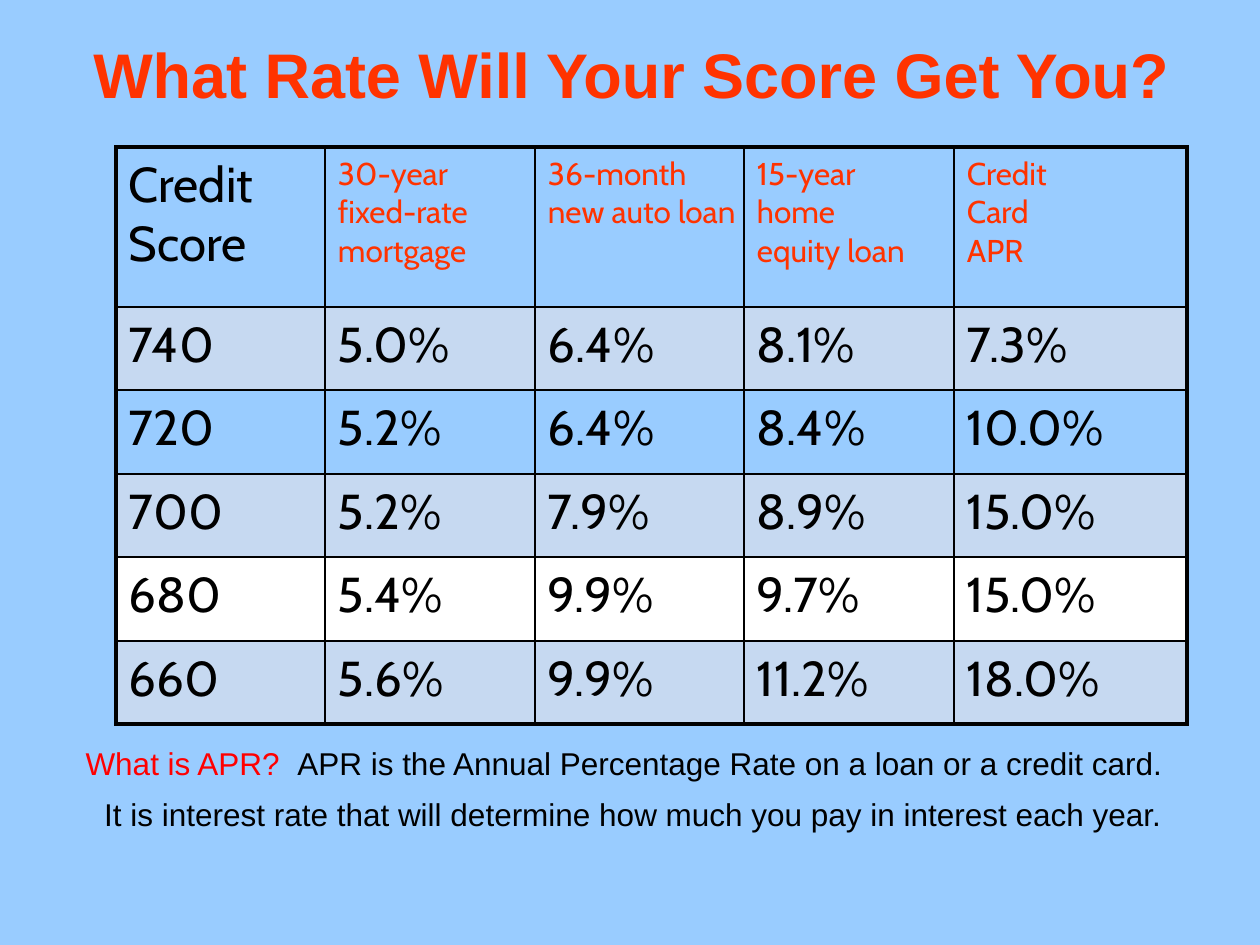
from lxml.etree import SubElement
from pptx import Presentation
from pptx.dml.color import RGBColor as Rgb
from pptx.enum.text import MSO_ANCHOR as Anchor, PP_ALIGN as Align
from pptx.oxml.ns import qn
from pptx.util import Pt

PX = 914400 / 126
COLORS = {"sky": "99CCFF", "orange": "FF3300", "red": "FF0000",
          "black": "000000", "pale": "C6D9F1", "white": "FFFFFF"}


def px(*lengths):
    """Turn pixel lengths into a list of EMU."""
    return [round(length * PX) for length in lengths]


def add_span(para, text, font, size, color, bold=False):
    span = para.add_run()
    span.text = text
    for name, value in {"name": font, "size": Pt(size), "bold": bold}.items():
        setattr(span.font, name, value)
    span.font.color.rgb = Rgb.from_string(COLORS[color])


deck = Presentation()
deck.slide_width, deck.slide_height = px(1260, 945)
slide = deck.slides.add_slide(deck.slide_layouts[6])
slide.background.fill.solid()
slide.background.fill.fore_color.rgb = Rgb.from_string(COLORS["sky"])
SIDES = ("margin_left", "margin_top", "margin_right", "margin_bottom")

# Title
title = slide.shapes.add_textbox(*px(67, 26, 1134, 95)).text_frame
title_format = {"word_wrap": True, "vertical_anchor": Anchor.MIDDLE,
                **dict(zip(SIDES, px(13, 6, 18, 6)))}
for name, value in title_format.items():
    setattr(title, name, value)
title.paragraphs[0].alignment = Align.CENTER
add_span(title.paragraphs[0], "What Rate Will Your Score Get You?", "Arial", 36, "orange", True)

# Rate table: row fill, then cell texts with one paragraph a line
ROWS = [
    (None, ["Credit\nScore", "30-year\nfixed-rate mortgage", "36-month\nnew auto loan",
            "15-year\nhome\nequity loan", "Credit\nCard\nAPR"]),
    ("pale", ["740", "5.0%", "6.4%", "8.1%", "7.3%"]),
    (None, ["720", "5.2%", "6.4%", "8.4%", "10.0%"]),
    ("pale", ["700", "5.2%", "7.9%", "8.9%", "15.0%"]),
    ("white", ["680", "5.4%", "9.9%", "9.7%", "15.0%"]),
    ("pale", ["660", "5.6%", "9.9%", "11.2%", "18.0%"]),
]
WIDTHS = px(209, 210, 209, 210, 233)
HEIGHTS = px(160, 83, 84, 83, 84, 83)
last_row, last_column = len(HEIGHTS) - 1, len(WIDTHS) - 1
table = slide.shapes.add_table(len(HEIGHTS), len(WIDTHS), *px(116, 147, 1071, 577)).table
table.first_row = table.horz_banding = False
for column, width in zip(table.columns, WIDTHS):
    column.width = width
for row, height in zip(table.rows, HEIGHTS):
    row.height = height

for r, (fill, texts) in enumerate(ROWS):
    for c, text in enumerate(texts):
        cell = table.cell(r, c)
        for side in SIDES:
            setattr(cell, side, px(8)[0])

        is_loan_heading = r == 0 and c > 0
        size, color = (18, "orange") if is_loan_heading else (28, "black")
        for i, line in enumerate(text.split("\n")):
            para = cell.text_frame.add_paragraph() if i else cell.text_frame.paragraphs[0]
            para._p.get_or_add_pPr().set("marL", str(px(5)[0]))
            add_span(para, line, "Cabin", size, color)

        properties = cell._tc.get_or_add_tcPr()
        outer_edges = {"a:lnL": c == 0, "a:lnR": c == last_column,
                       "a:lnT": r == 0, "a:lnB": r == last_row}
        for tag, is_outer in outer_edges.items():
            border = SubElement(properties, qn(tag), w=str(Pt(2.25 if is_outer else 1)))
            SubElement(SubElement(border, qn("a:solidFill")), qn("a:srgbClr"), val=COLORS["black"])
        if fill:
            cell.fill.solid()
            cell.fill.fore_color.rgb = Rgb.from_string(COLORS[fill])
        else:
            cell.fill.background()

# Explanation of APR: space before, right indent in px, spans
EXPLANATION = [
    (0, 18, [("What is APR?  ", "red"),
             ("APR is the Annual Percentage Rate on a loan or a credit card.", "black")]),
    (10.5, 0, [("It is interest rate that will determine how much you pay in interest each year.",
                "black")]),
]
note = slide.shapes.add_textbox(*px(34, 750, 1198, 136)).text_frame
note.word_wrap = True
for side, margin in zip(SIDES, px(0, 0, 5, 0)):
    setattr(note, side, margin)
for i, (space, indent, spans) in enumerate(EXPLANATION):
    para = note.add_paragraph() if i else note.paragraphs[0]
    para_format = {"alignment": Align.CENTER, "line_spacing": 0.85, "space_before": Pt(space)}
    for name, value in para_format.items():
        setattr(para, name, value)
    for name, margin in zip(("marL", "marR"), px(5, indent)):
        para._p.get_or_add_pPr().set(name, str(margin))
    for text, color in spans:
        add_span(para, text, "Arial", 18, color)

deck.save("out.pptx")
